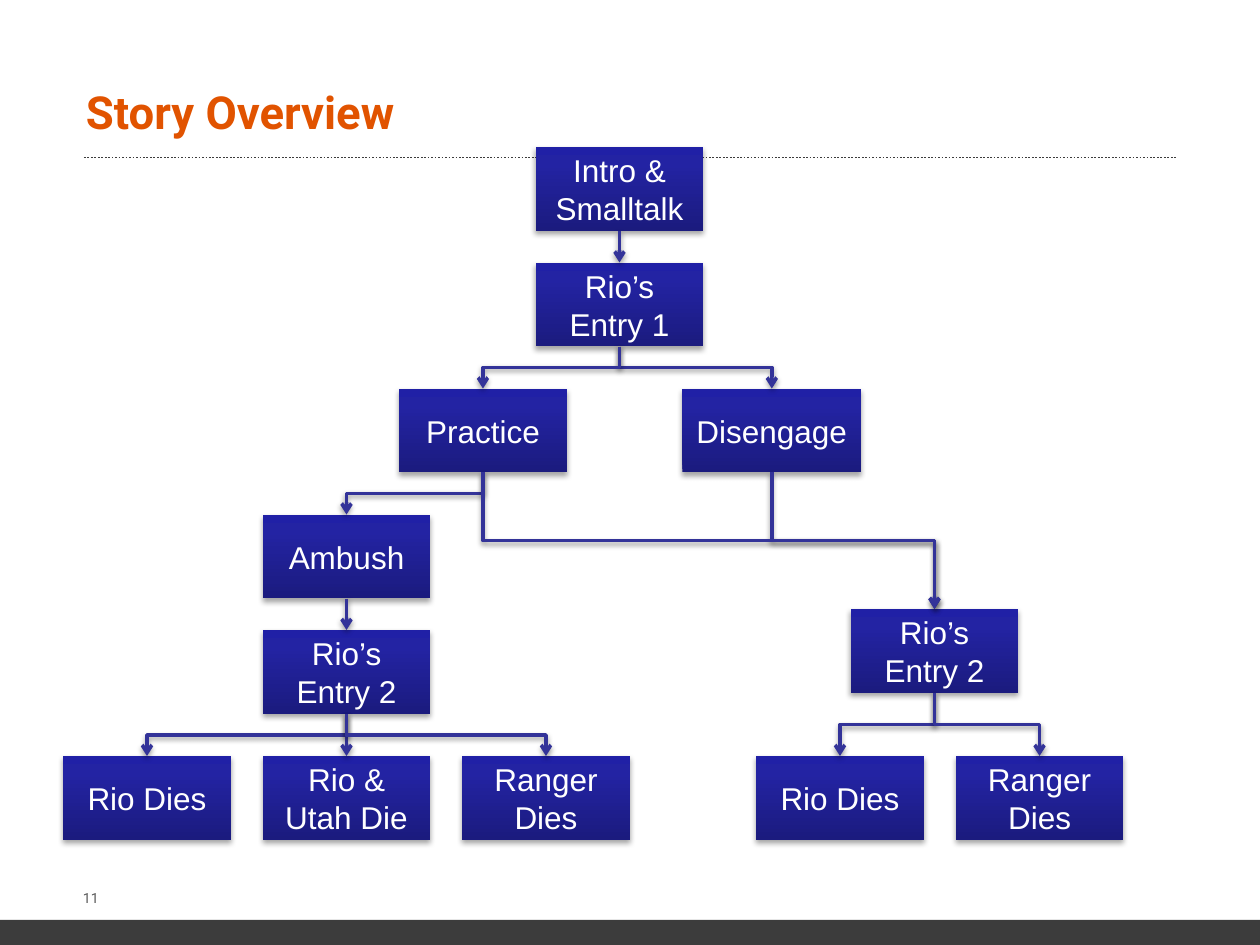
from lxml.etree import SubElement
from pptx import Presentation
from pptx.dml.color import RGBColor
from pptx.enum.dml import MSO_LINE
from pptx.enum.shapes import MSO_CONNECTOR, MSO_SHAPE
from pptx.enum.text import MSO_ANCHOR, PP_ALIGN
from pptx.oxml import parse_xml
from pptx.oxml.ns import nsdecls, qn
from pptx.util import Inches, Pt

ORANGE = RGBColor(0xE1, 0x53, 0x00)
DARK = RGBColor(0x3C, 0x3C, 0x3C)
GRAY = RGBColor(0x5A, 0x5A, 0x5A)
WHITE = RGBColor(0xFF, 0xFF, 0xFF)
BLUE = RGBColor(0x33, 0x33, 0x99)
SHADES = [
    (0, RGBColor(0x1B, 0x1B, 0x7E)),
    (80, RGBColor(0x23, 0x23, 0xA3)),
    (100, RGBColor(0x20, 0x20, 0xA6)),
]

UNIT = Inches(1) // 12
WIDE, HIGH = 16, 8


def write(shape, text, size=18, font="Arial", color=WHITE, bold=False,
          align=PP_ALIGN.CENTER, anchor=MSO_ANCHOR.MIDDLE, wrap=True, space=None):
    frame = shape.text_frame
    frame.word_wrap = wrap
    frame.vertical_anchor = anchor
    frame.text = text
    for para in frame.paragraphs:
        para.alignment = align
        para.line_spacing = space
        para.font.size = Pt(size)
        para.font.name = font
        para.font.bold = bold
        para.font.color.rgb = color


def shadow(shape, alpha, gap):
    shape._element.spPr.append(parse_xml(
        f'<a:effectLst {nsdecls("a")}><a:outerShdw blurRad="40000" dist="{gap}" '
        f'dir="5400000" rotWithShape="0"><a:srgbClr val="000000">'
        f'<a:alpha val="{alpha * 1000}"/></a:srgbClr></a:outerShdw></a:effectLst>'))


deck = Presentation()
deck.slide_width = 120 * UNIT
deck.slide_height = 90 * UNIT
slide = deck.slides.add_slide(deck.slide_layouts[6])
shapes = slide.shapes

bar = shapes.add_shape(MSO_SHAPE.RECTANGLE, 0, int(87.6 * UNIT), 120 * UNIT, int(2.4 * UNIT))
bar.shadow.inherit = False
bar.fill.solid()
bar.fill.fore_color.rgb = DARK
bar.line.fill.background()

rule = shapes.add_connector(MSO_CONNECTOR.STRAIGHT, 8 * UNIT, 15 * UNIT, 112 * UNIT, 15 * UNIT)
rule.line.color.rgb = DARK
rule.line.width = Pt(1)
rule.line.dash_style = MSO_LINE.ROUND_DOT
SubElement(rule._element.spPr, qn("a:effectLst"))

page = shapes.add_textbox(Inches(0.56), Inches(7.01), Inches(0.34), Inches(0.23))
write(page, "11", size=8, font="Roboto", color=GRAY, align=PP_ALIGN.LEFT,
      anchor=MSO_ANCHOR.TOP, wrap=False)

title = shapes.add_textbox(7 * UNIT, 8 * UNIT, 106 * UNIT, 6 * UNIT)
write(title, "Story Overview", size=26, font="Roboto", color=ORANGE, bold=True,
      align=PP_ALIGN.LEFT, space=Pt(26))

SCENES = [
    ("intro", "Intro &\nSmalltalk", 51, 14, WIDE),
    ("entry", "Rio’s\nEntry 1", 51, 25, WIDE),
    ("practice", "Practice", 38, 37, WIDE),
    ("leave", "Disengage", 65, 37, WIDE + 1),
    ("ambush", "Ambush", 25, 49, WIDE),
    ("right", "Rio’s Entry 2", 81, 58, WIDE),
    ("left", "Rio’s Entry 2", 25, 60, WIDE),
    ("rio", "Rio Dies", 6, 72, WIDE),
    ("both", "Rio & Utah Die", 25, 72, WIDE),
    ("ranger", "Ranger Dies", 44, 72, WIDE),
    ("rio two", "Rio Dies", 72, 72, WIDE),
    ("ranger two", "Ranger Dies", 91, 72, WIDE),
]
stops = "".join(f'<a:gs pos="{place * 1000}"><a:srgbClr val="{shade}"/></a:gs>'
                for place, shade in SHADES)
boxes = {}
for key, text, col, row, wide in SCENES:
    box = shapes.add_shape(MSO_SHAPE.RECTANGLE, col * UNIT, row * UNIT, wide * UNIT, HIGH * UNIT)
    box._element.spPr.append(parse_xml(
        f'<a:gradFill {nsdecls("a")} rotWithShape="1"><a:gsLst>{stops}</a:gsLst>'
        f'<a:lin ang="16200000" scaled="0"/></a:gradFill>'))
    box.line.fill.background()
    shadow(box, 35, 23000)
    write(box, text)
    boxes[key] = box

LINKS = [
    ("intro", "entry"), ("entry", "leave"), ("entry", "practice"),
    ("practice", "ambush"), ("leave", "right"), ("ambush", "left"),
    ("practice", "right"), ("left", "rio"), ("left", "both"),
    ("left", "ranger"), ("right", "rio two"), ("right", "ranger two"),
]
for start, end in LINKS:
    above, below = boxes[start], boxes[end]
    x1, y1 = above.left + above.width // 2, above.top + above.height
    x2, y2 = below.left + below.width // 2, below.top
    run, drop = abs(x2 - x1), y2 - y1
    kind = MSO_CONNECTOR.ELBOW if run else MSO_CONNECTOR.STRAIGHT
    link = shapes.add_connector(kind, x1, y1, x2, y2)
    link.begin_connect(above, 2)
    link.end_connect(below, 0)
    if run:
        link.left, link.top = (x1 + x2 - drop) // 2, (y1 + y2 - run) // 2
        link.width, link.height = drop, run
        frame = link._element.spPr.find(qn("a:xfrm"))
        frame.attrib.clear()
        frame.set("rot", "16200000" if x2 > x1 else "5400000")
        if x2 > x1:
            frame.set("flipH", "1")
    link.line.color.rgb = BLUE
    link.line.width = Pt(2)
    SubElement(link.line._get_or_add_ln(), qn("a:tailEnd"), type="arrow")
    shadow(link, 38, 20000)

deck.save("out.pptx")
